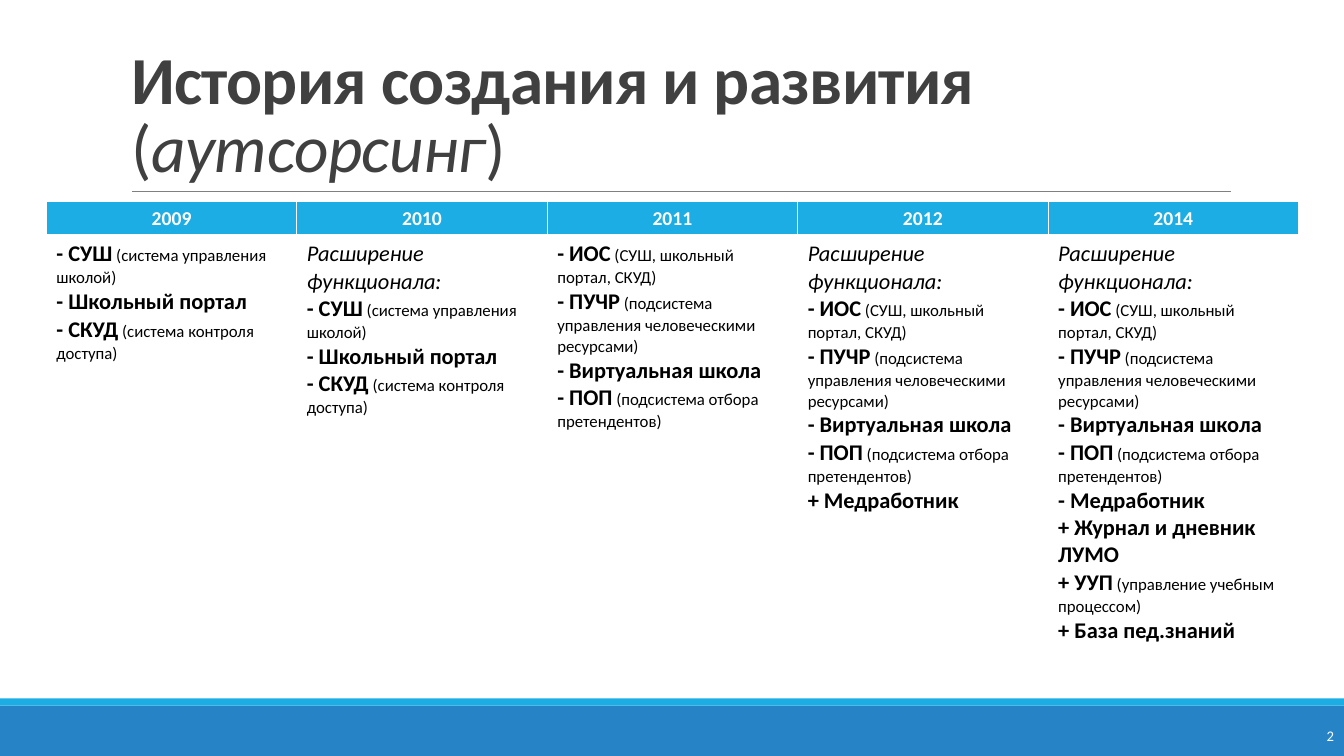
from dataclasses import dataclass

from lxml.etree import SubElement
from pptx import Presentation
from pptx.dml.color import RGBColor
from pptx.enum.shapes import MSO_CONNECTOR as Connector, MSO_SHAPE as Shape
from pptx.enum.text import MSO_ANCHOR as Anchor, MSO_AUTO_SIZE as AutoSize, PP_ALIGN as Align
from pptx.oxml.ns import qn
from pptx.util import Inches, Pt


@dataclass(frozen=True)
class Theme:
    font: str = "Calibri"
    white: str = "FFFFFF"
    black: str = "000000"
    title_color: str = "404040"
    rule_color: str = "808080"
    accent: str = "1CADE4"
    footer: str = "2683C6"
    title_size: float = 48
    year_size: float = 14
    term_size: float = 16
    note_size: float = 12
    number_size: float = 10.5


def set_all(target, values):
    for name, value in values.items():
        setattr(target, name, value)


class SlideBuilder:
    def __init__(self, slide, theme):
        self.slide, self.theme = slide, theme

    def run(self, paragraph, text, size, color, **formats):
        run = paragraph.add_run()
        run.text = text
        set_all(run.font, {"name": self.theme.font, "size": Pt(size), **formats})
        run.font.color.rgb = RGBColor.from_string(color)
        return run

    def bar(self, top, height, color):
        shape = self.slide.shapes.add_shape(
            Shape.RECTANGLE, 0, Inches(top), Inches(13.33), Inches(height))
        shape.shadow.inherit = False
        shape.fill.solid()
        shape.fill.fore_color.rgb = RGBColor.from_string(color)
        shape.line.fill.background()

    def rule(self, left, right, top):
        line = self.slide.shapes.add_connector(
            Connector.STRAIGHT, Inches(left), Inches(top), Inches(right), Inches(top))
        line.line.color.rgb = RGBColor.from_string(self.theme.rule_color)
        line.line.width = Pt(0.5)
        SubElement(line._element.spPr, qn("a:effectLst"))

    def title(self, heading, subtitle):
        shape = self.slide.shapes.title
        set_all(shape, {"left": Inches(1.2), "top": Inches(0.31),
                        "width": Inches(11), "height": Inches(1.59)})
        set_all(shape.text_frame, {"vertical_anchor": Anchor.BOTTOM, "word_wrap": True,
                                   "auto_size": AutoSize.NONE})
        paragraph = shape.text_frame.paragraphs[0]
        set_all(paragraph, {"alignment": Align.LEFT, "line_spacing": 0.85})
        pieces = [(heading, True, False), ("(", False, False),
                  (subtitle, False, True), (")", False, False)]
        for text, bold, italic in pieces:
            run = self.run(paragraph, text, self.theme.title_size, self.theme.title_color,
                           bold=bold, italic=italic)
            run.font._element.set("spc", "-50")
            if text == heading:
                paragraph.add_line_break()

    def cell_style(self, cell, fill, bottom_width=1):
        properties = cell._tc.get_or_add_tcPr()
        for side, width in (("L", 1), ("R", 1), ("T", 1), ("B", bottom_width)):
            border = SubElement(properties, qn(f"a:ln{side}"), w=str(Pt(width)))
            color = SubElement(border, qn("a:solidFill"))
            SubElement(color, qn("a:srgbClr"), val=self.theme.white)
        cell.fill.solid()
        cell.fill.fore_color.rgb = RGBColor.from_string(fill)

    def entries(self, cell, entries):
        theme, frame = self.theme, cell.text_frame
        for index, (term, note) in enumerate(entries):
            paragraph = frame.add_paragraph() if index else frame.paragraphs[0]
            is_module = term[0] in "-+"
            self.run(paragraph, term, theme.term_size, theme.black,
                     bold=is_module, italic=not is_module)
            if note:
                self.run(paragraph, f" ({note})", theme.note_size, theme.black, bold=False)

    def timeline(self, history):
        theme = self.theme
        table = self.slide.shapes.add_table(
            2, len(history), Inches(0.46), Inches(2), Inches(12.42), Inches(4.02)).table
        table.rows[0].height, table.rows[1].height = Inches(0.33), Inches(3.69)
        for column, (year, entries) in enumerate(history.items()):
            header, body = table.cell(0, column), table.cell(1, column)
            self.cell_style(header, theme.accent, bottom_width=3)
            self.cell_style(body, theme.white)
            header.vertical_anchor = Anchor.MIDDLE
            paragraph = header.text_frame.paragraphs[0]
            paragraph.alignment = Align.CENTER
            self.run(paragraph, year, theme.year_size, theme.white, bold=True)
            self.entries(body, entries)

    def slide_number(self, number):
        box = self.slide.shapes.add_textbox(
            Inches(11.9), Inches(7.1), Inches(1.43), Inches(0.4))
        set_all(box.text_frame, {"word_wrap": True, "vertical_anchor": Anchor.MIDDLE})
        paragraph = box.text_frame.paragraphs[0]
        paragraph.alignment = Align.RIGHT
        self.run(paragraph, number, self.theme.number_size, self.theme.white)


# Modules in use, as (term, note)
EXPANSION = [("Расширение функционала:", "")]
SCHOOL = [
    ("- СУШ", "система управления школой"),
    ("- Школьный портал", ""),
    ("- СКУД", "система контроля доступа"),
]
INTEGRATED = [
    ("- ИОС", "СУШ, школьный портал, СКУД"),
    ("- ПУЧР", "подсистема управления человеческими ресурсами"),
    ("- Виртуальная школа", ""),
    ("- ПОП", "подсистема отбора претендентов"),
]
HISTORY = {
    "2009": SCHOOL,
    "2010": EXPANSION + SCHOOL,
    "2011": INTEGRATED,
    "2012": EXPANSION + INTEGRATED + [("+ Медработник", "")],
    "2014": EXPANSION + INTEGRATED + [
        ("- Медработник", ""),
        ("+ Журнал и дневник ЛУМО", ""),
        ("+ УУП", "управление учебным процессом"),
        ("+ База пед.знаний", ""),
    ],
}


def main():
    presentation = Presentation()
    set_all(presentation, {"slide_width": Inches(13.33), "slide_height": Inches(7.5)})
    theme = Theme()
    slide = presentation.slides.add_slide(presentation.slide_layouts[5])
    builder = SlideBuilder(slide, theme)

    # Footer bars and title rule
    builder.bar(7, 0.5, theme.footer)
    builder.bar(6.93, 0.07, theme.accent)
    builder.rule(1.31, 12.21, 1.9)

    # Content
    builder.title("История создания и развития", "аутсорсинг")
    builder.timeline(HISTORY)
    builder.slide_number("2")

    presentation.save("out.pptx")


if __name__ == "__main__":
    main()
